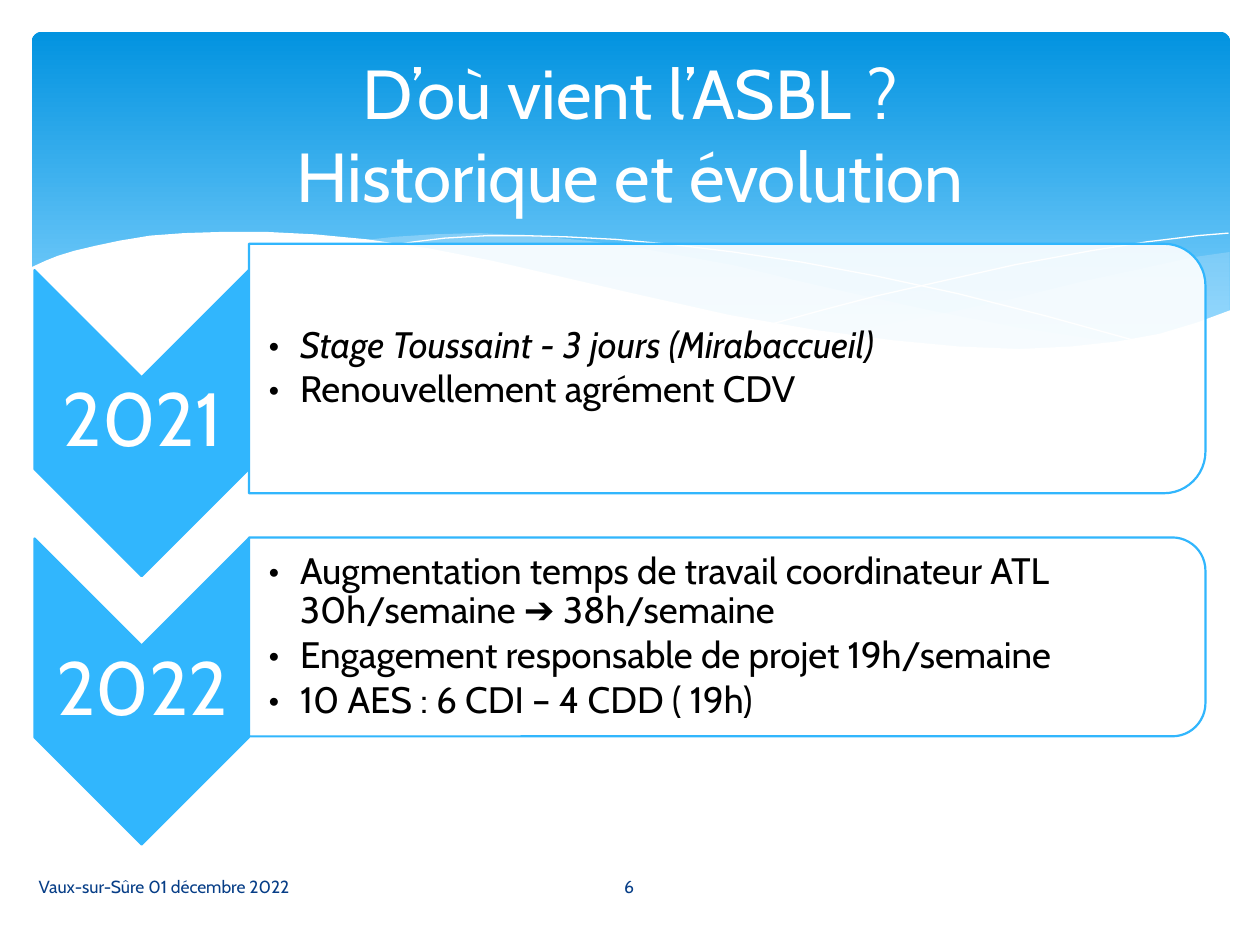
"""Build the slide on the history of the ASBL: a wave banner above a 2021-2022 timeline."""
from lxml import etree
from pptx import Presentation
from pptx.dml.color import RGBColor
from pptx.enum.shapes import MSO_SHAPE
from pptx.enum.text import MSO_ANCHOR, PP_ALIGN
from pptx.oxml.ns import qn
from pptx.util import Cm, Pt

ROUNDED, CHEVRON = MSO_SHAPE.ROUNDED_RECTANGLE, MSO_SHAPE.CHEVRON
TOP_ROUNDED = MSO_SHAPE.ROUND_2_SAME_RECTANGLE
MIDDLE, LEFT, CENTER = MSO_ANCHOR.MIDDLE, PP_ALIGN.LEFT, PP_ALIGN.CENTER
FONT = "Cabin"
COLORS = {"banner_top": "0293E0", "banner_bottom": "83D3FE", "wave": "C6E7FC",
          "white": "FFFFFF", "accent": "31B6FD", "text": "000000", "footer": "073E87"}


def paint(shape, fill=None, opacity=100, line=None, width=0):
    shape.shadow.inherit = False
    if fill:
        shape.fill.solid()
        shape.fill.fore_color.rgb = RGBColor.from_string(COLORS[fill])
        if opacity < 100:
            color = shape.fill._xPr.find(qn("a:solidFill"))[0]
            etree.SubElement(color, qn("a:alpha"), val=str(opacity * 1000))
    else:
        shape.fill.background()
    if line:
        shape.line.color.rgb = RGBColor.from_string(COLORS[line])
        shape.line.width = Pt(width)
    else:
        shape.line.fill.background()


def write(box, lines, size, color, align=LEFT, insets=(0.25, 0.13), spacing=1, after=0, bullet=False):
    frame = slide.shapes.add_textbox(*[Cm(v) for v in box]).text_frame
    frame.word_wrap = True
    frame.vertical_anchor = MIDDLE
    frame.margin_left = Cm(insets[0])
    frame.margin_right = frame.margin_top = frame.margin_bottom = Cm(insets[1])
    if not bullet:
        frame.margin_right = Cm(insets[0])
    for index, (words, italic) in enumerate(lines):
        paragraph = frame.add_paragraph() if index else frame.paragraphs[0]
        paragraph.alignment = align
        paragraph.line_spacing = spacing
        paragraph.space_after = Pt(after)
        if bullet:
            properties = paragraph._p.get_or_add_pPr()
            properties.set("marL", str(Cm(0.64)))
            properties.set("indent", str(-Cm(0.64)))
            etree.SubElement(properties, qn("a:buFont"), typeface=FONT)
            etree.SubElement(properties, qn("a:buChar"), char="•")
        for row, part in enumerate(words.split("\n")):
            if row:
                paragraph.add_line_break()
            run = paragraph.add_run()
            run.text = part
            run.font.name = FONT
            run.font.size = Pt(size)
            run.font.italic = italic
            run.font.color.rgb = RGBColor.from_string(COLORS[color])


prs = Presentation()
prs.slide_width, prs.slide_height = Cm(25.4), Cm(19.05)
slide = prs.slides.add_slide(prs.slide_layouts[6])

banner = slide.shapes.add_shape(ROUNDED, Cm(0.64), Cm(0.64), Cm(24.16), Cm(6.86))
banner.adjustments[0] = 0.03
paint(banner)
banner.fill.gradient()
banner.fill.gradient_angle = 270
for stop, position, name in zip(banner.fill.gradient_stops, (0, 0.9), ("banner_top", "banner_bottom")):
    stop.position = position
    stop.color.rgb = RGBColor.from_string(COLORS[name])

WAVE_UNIT = Cm(2.54) / 100
right_wave = [(976, 200), (948, 204), (921, 210), (861, 223), (805, 237), (753, 248), (706, 257),
              (661, 265), (691, 269), (719, 272), (745, 275), (781, 277), (814, 278), (844, 277),
              (872, 274), (897, 270), (921, 265), (942, 259), (963, 252), (976, 247)]
middle_wave = [(893, 273), (866, 269), (807, 260), (741, 247), (668, 231), (629, 222), (584, 211),
               (541, 203), (502, 196), (465, 191), (420, 187), (380, 185), (344, 186), (313, 188),
               (286, 191), (323, 196), (362, 203), (404, 211), (449, 222), (530, 240), (601, 255),
               (650, 264), (695, 270), (736, 275), (773, 277), (807, 278), (838, 278), (867, 276), (893, 273)]
falling_crest = [(309, 195), (328, 192), (353, 189), (387, 187), (416, 187), (450, 188), (489, 190),
                 (533, 194), (582, 200), (636, 208), (695, 219), (760, 233), (831, 251), (907, 272)]
rising_crest = [(613, 257), (653, 246), (695, 235), (748, 223), (806, 210), (866, 199),
                (910, 192), (951, 187), (975, 185)]
white_wave = [(977, 246), (950, 256), (920, 265), (887, 271), (850, 275), (809, 277), (761, 275),
              (708, 270), (648, 262), (579, 250), (503, 233), (447, 220), (391, 207), (340, 197),
              (292, 190), (250, 186), (211, 184), (177, 184), (146, 185), (119, 187), (95, 191),
              (76, 195), (59, 199), (46, 203), (36, 207), (23, 213), (23, 329), (977, 329)]
for points, fill, opacity in [(right_wave, "wave", 29), (middle_wave, "wave", 40),
                              (falling_crest, None, 100), (rising_crest, None, 100),
                              (white_wave, "white", 100)]:
    outline = slide.shapes.build_freeform(*points[0], scale=WAVE_UNIT)
    outline.add_line_segments(points[1:], close=bool(fill))
    paint(outline.convert_to_shape(), fill, opacity, None if fill else "white")

timeline = [
    ("2021", 7.59, 7.43, 5.03, [("Stage Toussaint - 3 jours (Mirabaccueil)", True),
                                ("Renouvellement agrément CDV", False)]),
    ("2022", 13, 12.84, 4.01, [("Augmentation temps de travail coordinateur ATL 30h/semaine ➔ 38h/semaine", False),
                               ("Engagement responsable de projet 19h/semaine", False),
                               ("10 AES : 6 CDI – 4 CDD ( 19h)", False)]),
]
PANEL_CENTER, PANEL_LENGTH = 14.66, 19.28
for year, year_top, middle, height, events in timeline:
    arrow = slide.shapes.add_shape(CHEVRON, Cm(-0.23), Cm(year_top - 1.22), Cm(6.17), Cm(4.32))
    arrow.rotation = 90
    paint(arrow, "accent", line="accent", width=1.25)
    write((0.71, year_top, 4.32, 1.85), [(year, False)], 43, "white", CENTER, (0.08, 0.08), 0.9)
    panel = slide.shapes.add_shape(TOP_ROUNDED, Cm(PANEL_CENTER - height / 2),
                                   Cm(middle - PANEL_LENGTH / 2), Cm(height), Cm(PANEL_LENGTH))
    panel.rotation = 90
    paint(panel, "white", 90, "accent", 1.25)
    text_height = height * 0.9
    write((5, middle - text_height / 2, 19.05, text_height), events, 21, "text",
          insets=(0.41, 0.03), spacing=0.9, after=3, bullet=True)

write((0.53, 17.37, 10.52, 1.02), [("Vaux-sur-Sûre 01 décembre 2022", False)], 10, "footer")
write((1.27, 0.94, 22.86, 3.48), [("D’où vient l’ASBL ?\nHistorique et évolution", False)], 39.6, "white", CENTER)
write((11.07, 17.37, 3.23, 1.02), [("6", False)], 10, "footer", CENTER)

prs.save("out.pptx")
